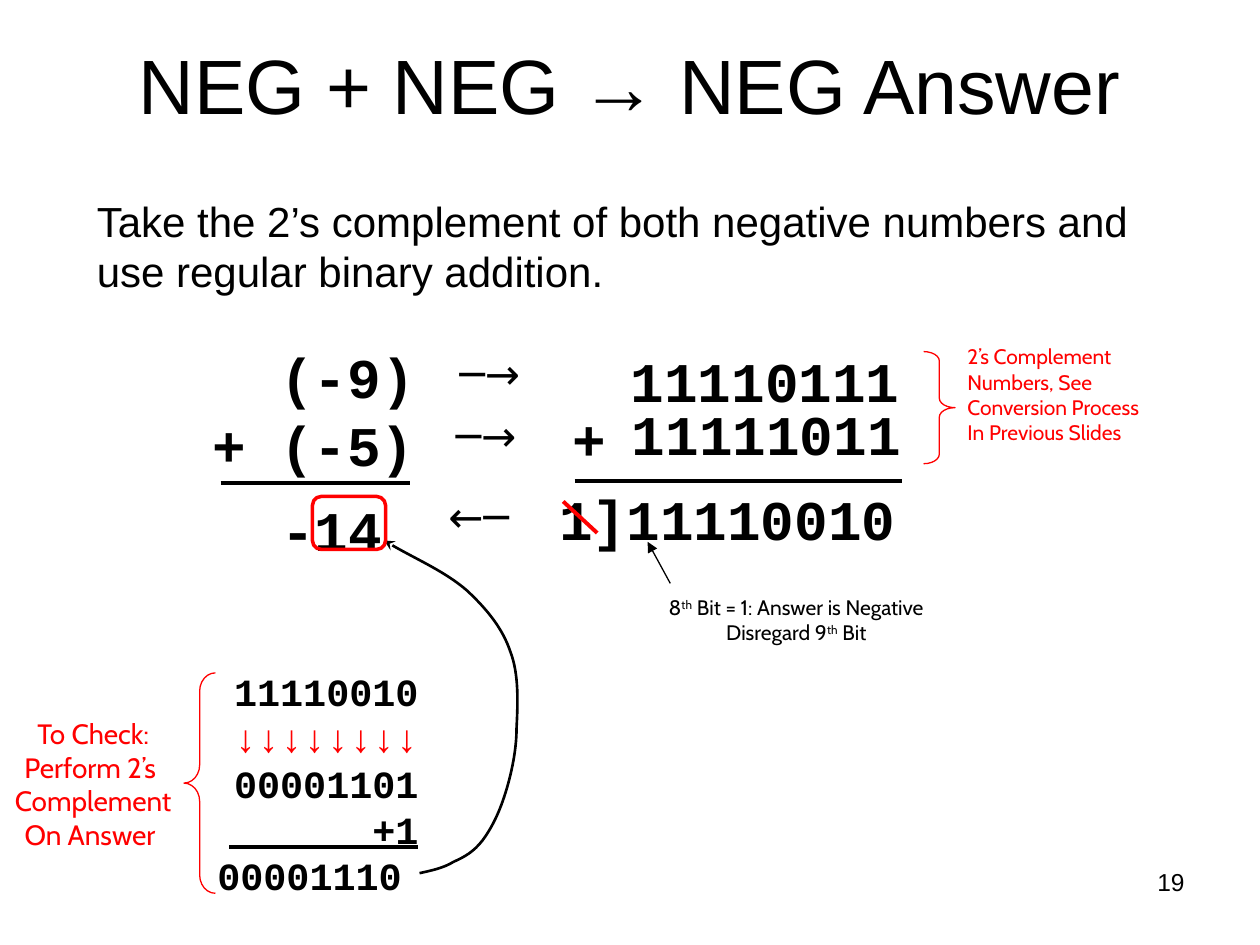
from lxml import etree
from pptx import Presentation
from pptx import util as u
from pptx.dml.color import RGBColor
from pptx.enum import shapes, text
from pptx.oxml.ns import qn

COLORS = {"ink": "000000", "mark": "FF0000"}
MONO = {"font": "Courier New", "bold": True}
NOTE = {"font": "Cabin", "size": 12}
ALIGN = {"left": text.PP_ALIGN.LEFT, "center": text.PP_ALIGN.CENTER,
         "right": text.PP_ALIGN.RIGHT}


def color(name):
    return RGBColor.from_string(COLORS[name])


def inches(values):
    return [u.Inches(value) for value in values]


def write(frame, lines, font="Arial", size=12, ink="ink", bold=False,
          align="left", wrap=True):
    """Fill a frame; a line is a string or a list of (text, overrides) runs."""
    frame.word_wrap = wrap
    for index, line in enumerate(lines):
        paragraph = frame.paragraphs[0] if index == 0 else frame.add_paragraph()
        paragraph.alignment = ALIGN[align]
        for words, changes in [(line, {})] if isinstance(line, str) else line:
            run = paragraph.add_run()
            run.text = words
            run.font.name = font
            run.font.size = u.Pt(changes.get("size", size))
            run.font.bold = bold
            run.font.color.rgb = color(changes.get("ink", ink))
            if changes.get("raised"):
                run.font._element.set("baseline", "30000")


def add_text(slide, box, *lines, **style):
    write(slide.shapes.add_textbox(*inches(box)).text_frame, lines, **style)


def set_line(shape, ink, width, arrow=None):
    shape.line.color.rgb = color(ink)
    shape.line.width = u.Pt(width)
    if arrow:
        etree.SubElement(shape.line._get_or_add_ln(), qn("a:tailEnd"), type=arrow)


def add_line(slide, start, end, ink="ink", width=2.25, arrow=None):
    line = slide.shapes.add_connector(
        shapes.MSO_CONNECTOR.STRAIGHT, *inches(start + end))
    set_line(line, ink, width, arrow)
    etree.SubElement(line._element.spPr, qn("a:effectLst"))


def add_outline(slide, kind, box, width, bend=None, flip=False):
    shape = slide.shapes.add_shape(kind, *inches(box))
    shape.shadow.inherit = False
    shape.fill.background()
    set_line(shape, "mark", width)
    if bend:
        shape.adjustments[0] = bend
    if flip:
        shape._element.spPr.find(qn("a:xfrm")).set("flipH", "1")


def add_curve(slide, start, points):
    """Draw an arrow along Bezier curves, three points to a curve."""
    builder = slide.shapes.build_freeform(*inches(start))
    builder.add_line_segments([inches(point) for point in points], close=False)
    curve = builder.convert_to_shape()
    curve.shadow.inherit = False
    curve.fill.background()
    set_line(curve, "ink", 1.5, "stealth")
    outline = next(curve._element.iter(qn("a:path")))
    segments = outline.findall(qn("a:lnTo"))
    for first in range(0, len(segments), 3):
        bezier = etree.SubElement(outline, qn("a:cubicBezTo"))
        for segment in segments[first:first + 3]:
            bezier.append(segment[0])
            outline.remove(segment)


def add_decimal_sum(slide):
    for words, top, right in (("(-9)", 2.67, 3.39), ("+ (-5)", 3.21, 3.39),
                              ("-14", 3.88, 3.13)):
        add_text(slide, (1.3, top, right - 1.3, 0.64), words,
                 size=32, align="right", **MONO)
    add_line(slide, (1.75, 3.83), (3.25, 3.83))
    for words, left, top in (("─→", 3.55, 2.71), ("─→", 3.52, 3.2),
                             ("←─", 3.46, 3.84)):
        add_text(slide, (left, top, 0.86, 0.5), words, font="Cabin", size=24)


def add_binary_sum(slide):
    for words, box in (("11110111", (4.74, 2.7, 2.5, 0.64)),
                       ("11111011", (4.58, 3.12, 2.67, 0.64)),
                       ("+", (4.33, 3.16, 0.58, 0.64))):
        add_text(slide, box, words, size=32, align="right", **MONO)
    add_line(slide, (4.56, 3.82), (7.16, 3.82))
    add_text(slide, (4.34, 3.8, 2.9, 0.64), "1]11110010",
             size=32, wrap=False, **MONO)
    add_line(slide, (4.47, 3.98), (4.74, 4.23), ink="mark")

    add_text(slide, (7.58, 2.68, 1.75, 1.1), "2’s Complement", "Numbers, See",
             "Conversion Process", "In Previous Slides", ink="mark", **NOTE)
    add_outline(slide, shapes.MSO_SHAPE.RIGHT_BRACE,
                (7.33, 2.79, 0.25, 0.89), 0.75, bend=0.3)

    add_line(slide, (5.32, 4.63), (5.14, 4.3), width=0.75, arrow="triangle")
    raised = ("th", {"raised": True})
    add_text(slide, (5.03, 4.67, 2.58, 0.51),
             [("8", {}), raised, (" Bit = 1: Answer is Negative", {})],
             [("Disregard 9", {}), raised, (" Bit", {})],
             align="center", wrap=False, **NOTE)


def add_check(slide):
    add_text(slide, (1.5, 5.25, 1.92, 1.95), "11110010",
             [("↓" * 8, {"ink": "mark"})], "00001101", "+1",
             [("00001110", {}), (" ", {"size": 16})],
             size=22, align="right", **MONO)
    add_line(slide, (1.82, 6.72), (3.32, 6.72))
    add_outline(slide, shapes.MSO_SHAPE.RIGHT_BRACE,
                (1.46, 5.34, 0.25, 1.75), 0.75, bend=0.58, flip=True)
    add_text(slide, (0.02, 5.64, 1.44, 1.17), "To Check:", "Perform 2’s ",
             "Complement", "On Answer ",
             font="Cabin", size=16, ink="mark", align="center")
    add_curve(slide, (3.33, 6.93), [
        (3.42, 6.91), (3.52, 6.89), (3.6, 6.84),
        (3.69, 6.8), (3.76, 6.76), (3.83, 6.67),
        (3.89, 6.59), (3.95, 6.48), (4, 6.33),
        (4.05, 6.18), (4.1, 5.97), (4.1, 5.78),
        (4.11, 5.58), (4.12, 5.35), (4.05, 5.17),
        (3.99, 4.99), (3.87, 4.84), (3.71, 4.69),
        (3.54, 4.54), (3.26, 4.42), (3.05, 4.29)])
    add_outline(slide, shapes.MSO_SHAPE.ROUNDED_RECTANGLE,
                (2.48, 3.94, 0.58, 0.42), 2)


def main():
    presentation = Presentation()
    presentation.slide_width, presentation.slide_height = inches((10, 7.5))
    slide = presentation.slides.add_slide(presentation.slide_layouts[5])
    title = slide.shapes.title
    title.left, title.top, title.width, title.height = inches((0, 0, 10, 1.33))
    write(title.text_frame, ["NEG + NEG → NEG Answer"], size=44, align="center")
    add_text(slide, (7.17, 6.83, 2.33, 0.52), "19", size=14, align="right")
    add_text(slide, (0.67, 1.5, 8.67, 0.9),
             "Take the 2’s complement of both negative numbers and "
             "use regular binary addition.", size=24)
    add_decimal_sum(slide)
    add_binary_sum(slide)
    add_check(slide)
    presentation.save("out.pptx")


if __name__ == "__main__":
    main()
